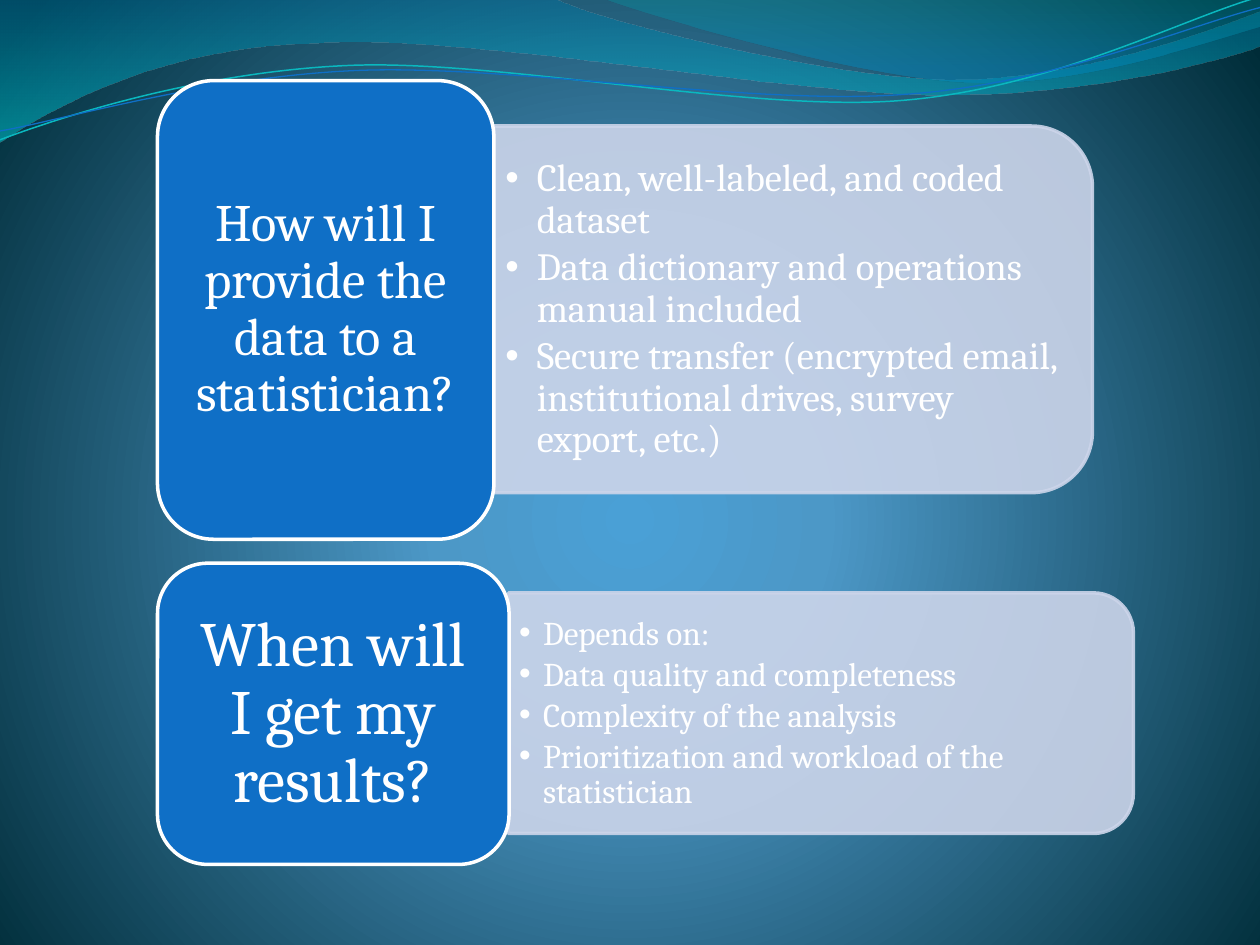
from pptx import Presentation
from pptx.dml.color import RGBColor
from pptx.enum.shapes import MSO_SHAPE as Kind
from pptx.enum.text import MSO_ANCHOR as Anchor, MSO_AUTO_SIZE as Fit, PP_ALIGN as Align
from pptx.oxml import parse_xml
from pptx.oxml.ns import nsdecls, qn
from pptx.oxml.xmlchemy import OxmlElement as Node
from pptx.util import Inches, Pt

FONT, WHITE, BLUE, PALE = "Cambria", "FFFFFF", "0F6FC6", "CCD5EA"

WAVES = [
    ([(0, 0), (4.4, -0.01), (4.76, 0.17, 6.64, 0.63, 7.58, 0.63),
      (8.53, 0.63, 9.58, 0.26, 10, 0.09), (10.01, 0.36),
      (9.83, 0.44, 8.7, 0.76, 7.46, 0.75), (6.22, 0.75, 3.82, 0.28, 2.57, 0.34),
      (1.29, 0.36, 0.46, 0.83, -0.01, 1.13)],
     [(0, "0074A1", 45), (100, "00C6CF", 55)]),
    ([(4.79, -0.01), (5.09, 0.11, 6.82, 0.62, 7.69, 0.65),
      (8.56, 0.69, 9.61, 0.32, 10, 0.21), (10, 0)],
     [(0, "00A1A9", 30), (80, "008BBF", 45)]),
]
CURVES = [
    ([(0, 1.11), (0.48, 0.93, 1.58, 0.57, 2.77, 0.52),
      (3.95, 0.47, 5.93, 0.89, 7.13, 0.8), (8.33, 0.71, 9.38, 0.15, 9.98, -0.02)],
     "0AB8BF", 0.85),
    ([(0, 1.04), (0.47, 0.96, 1.64, 0.61, 2.83, 0.56),
      (4.03, 0.51, 5.97, 0.84, 7.17, 0.75), (8.36, 0.67, 9.41, 0.21, 10, 0.06)],
     BLUE, 0.75),
]
TOPICS = [
    dict(head="How will I provide the data to a statistician?", size=30, inset=0.12,
         card=(1.25, 0.64, 2.67, 3.64), panel=(4.84, 0.08, 2.91, 4.75),
         area=(3.92, 1.15, 4.6, 2.62), small=22, pad=0.09, hang=0.25,
         items=["Clean, well-labeled, and coded dataset",
                "Data dictionary and operations manual included",
                "Secure transfer (encrypted email, institutional drives, survey export, etc.)"]),
    dict(head="When will I get my results?", size=36, inset=0.15,
         card=(1.25, 4.47, 2.79, 2.39), panel=(5.56, 3.18, 1.91, 4.96),
         area=(4.04, 4.8, 4.87, 1.73), small=19, pad=0.08, hang=0.19,
         items=["Depends on:", "Data quality and completeness",
                "Complexity of the analysis",
                "Prioritization and workload of the statistician"]),
]


def rgb(code):
    return RGBColor.from_string(code)


def box(area):
    return [Inches(v) for v in area]


def shade(root, stops, course):
    marks = "".join(
        f'<a:gs pos="{pos * 1000}"><a:srgbClr val="{code}">'
        f'<a:alpha val="{alpha * 1000}"/></a:srgbClr></a:gs>'
        for pos, code, alpha in stops)
    old = root.find(".//" + qn("a:solidFill"))
    old.getparent().replace(old, parse_xml(
        f'<a:gradFill {nsdecls("a")} rotWithShape="1">'
        f'<a:gsLst>{marks}</a:gsLst>{course}</a:gradFill>'))


def paint_back(slide):
    fill = slide.background.fill
    fill.solid()
    fill.fore_color.rgb = rgb("4AA0D6")
    shade(slide._element, [(0, "4AA0D6", 100), (25, "4C98C7", 100), (100, "002C38", 100)],
          '<a:path path="circle"><a:fillToRect l="10000" t="110000" '
          'r="10000" b="100000"/></a:path>')


def bend(shape, steps):
    lines = list(shape._element.spPr.iter(qn("a:lnTo")))
    for line, step in zip(lines, steps[1:]):
        if len(step) == 2:
            continue
        arc = Node("a:cubicBezTo")
        for x, y in zip(step[::2], step[1::2]):
            spot = Node("a:pt")
            spot.set("x", str(Inches(x) - shape.left))
            spot.set("y", str(Inches(y) - shape.top))
            arc.append(spot)
        line.getparent().replace(line, arc)


def add_path(slide, steps, close):
    ends = [tuple(box(step[-2:])) for step in steps]
    pen = slide.shapes.build_freeform(*ends[0])
    pen.add_line_segments(ends[1:], close=close)
    shape = pen.convert_to_shape()
    shape.shadow.inherit = False
    bend(shape, steps)
    return shape


def add_wave(slide, steps, stops):
    wave = add_path(slide, steps, True)
    wave.fill.solid()
    wave.fill.fore_color.rgb = rgb(stops[0][1])
    wave.line.fill.background()
    shade(wave._element.spPr, stops, '<a:lin ang="5400000" scaled="0"/>')


def add_curve(slide, steps, code, width):
    curve = add_path(slide, steps, False)
    curve.fill.background()
    curve.line.color.rgb = rgb(code)
    curve.line.width = Pt(width)


def add_block(slide, kind, area, fill, line):
    block = slide.shapes.add_shape(kind, *box(area))
    block.shadow.inherit = False
    block.fill.solid()
    block.fill.fore_color.rgb = rgb(fill)
    block.line.color.rgb = rgb(line)
    block.line.width = Pt(2)
    return block


def add_panel(slide, area):
    panel = add_block(slide, Kind.ROUND_2_SAME_RECTANGLE, area, PALE, PALE)
    panel.rotation = 90
    for tint in panel._element.spPr.iter(qn("a:srgbClr")):
        alpha = Node("a:alpha")
        alpha.set("val", "90000")
        tint.append(alpha)


def set_frame(frame, side):
    frame.word_wrap = True
    frame.auto_size = Fit.NONE
    frame.vertical_anchor = Anchor.MIDDLE
    frame.margin_left = frame.margin_right = Inches(side)
    frame.margin_top = frame.margin_bottom = Inches(side / 2)


def set_para(para, text, size, align, after):
    para.text = text
    para.alignment = align
    para.line_spacing = 0.9
    para.space_before = Pt(0)
    para.space_after = Pt(round(size * after, 1))
    para.font.name = FONT
    para.font.size = Pt(size)
    para.font.color.rgb = rgb(WHITE)


def add_card(slide, topic):
    card = add_block(slide, Kind.ROUNDED_RECTANGLE, topic["card"], BLUE, WHITE)
    set_frame(card.text_frame, topic["inset"])
    set_para(card.text_frame.paragraphs[0], topic["head"], topic["size"], Align.CENTER, 0.35)


def fill_list(slide, body, topic):
    slide.shapes._spTree.append(body._element)
    body.left, body.top, body.width, body.height = box(topic["area"])
    frame = body.text_frame
    set_frame(frame, topic["pad"])
    for i, item in enumerate(topic["items"]):
        para = frame.add_paragraph() if i else frame.paragraphs[0]
        set_para(para, item, topic["small"], Align.LEFT, 0.15)
        para.level = 1
        props = para._p.get_or_add_pPr()
        props.set("marL", str(Inches(topic["hang"])))
        props.set("indent", str(-Inches(topic["hang"])))
        dot = Node("a:buChar")
        dot.set("char", "•")
        props.find(qn("a:defRPr")).addprevious(dot)


def main():
    deck = Presentation()
    deck.slide_width, deck.slide_height = Inches(10), Inches(7.5)
    slide = deck.slides.add_slide(deck.slide_layouts[3])
    title, *bodies = slide.placeholders
    title._element.getparent().remove(title._element)
    paint_back(slide)
    for wave in WAVES:
        add_wave(slide, *wave)
    for curve in CURVES:
        add_curve(slide, *curve)
    for topic, body in zip(TOPICS, bodies):
        add_panel(slide, topic["panel"])
        fill_list(slide, body, topic)
        add_card(slide, topic)
    deck.save("out.pptx")


if __name__ == "__main__":
    main()
